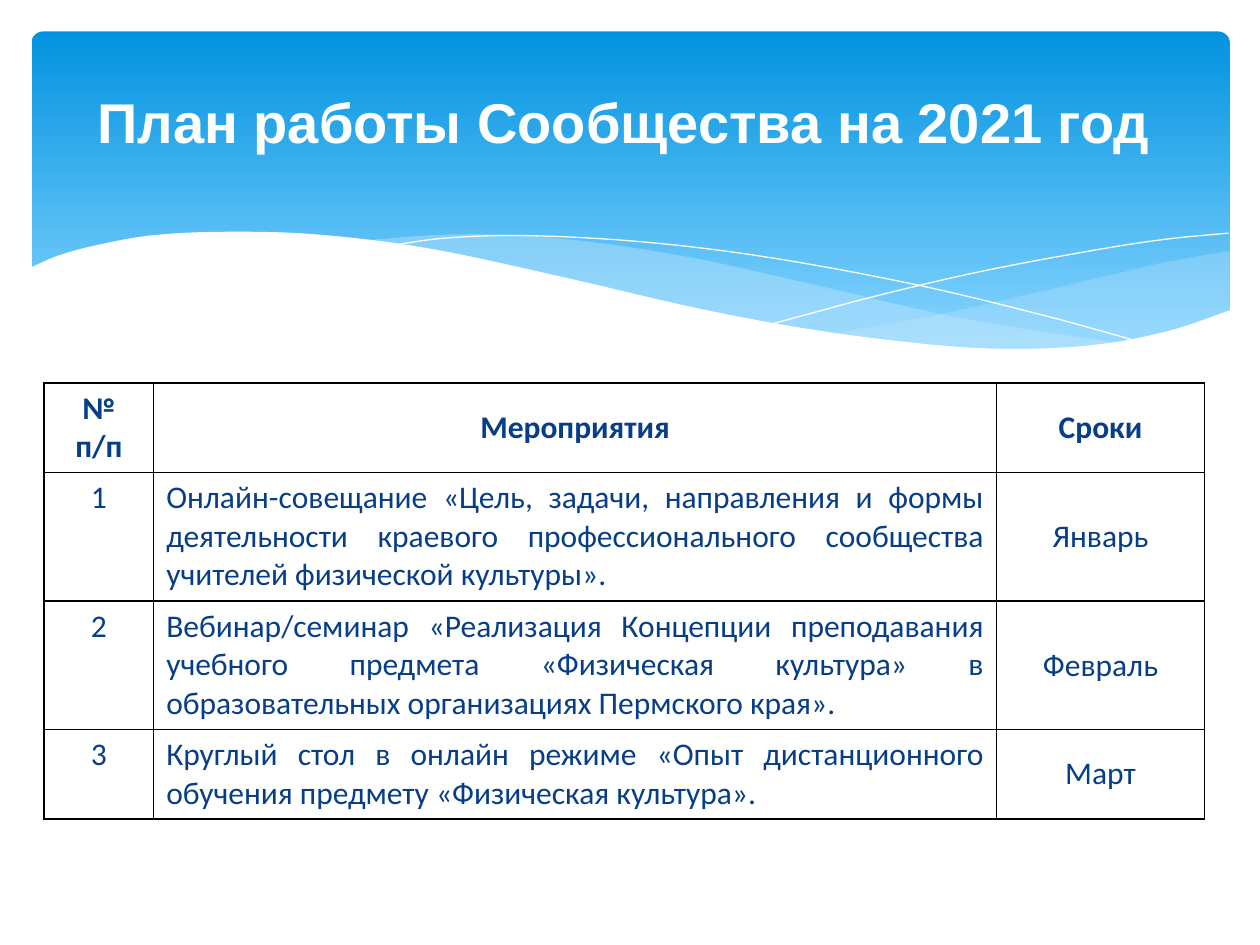
from pptx import Presentation
from pptx.dml.color import RGBColor
from pptx.enum.shapes import MSO_SHAPE
from pptx.enum.text import MSO_ANCHOR, PP_ALIGN
from pptx.oxml import parse_xml
from pptx.oxml.ns import nsdecls, qn
from pptx.util import Inches, Pt
from lxml import etree

CENTER, JUSTIFY = PP_ALIGN.CENTER, PP_ALIGN.JUSTIFY
TOP, MIDDLE = MSO_ANCHOR.TOP, MSO_ANCHOR.MIDDLE
WHITE = RGBColor(0xFF, 0xFF, 0xFF)
NAVY = RGBColor(0x07, 0x3E, 0x87)
DEEP = RGBColor(0x02, 0x93, 0xE0)
SKY = RGBColor(0x83, 0xD3, 0xFE)
PALE = RGBColor(0xC6, 0xE7, 0xFC)

# Content
TITLE = "План работы Сообщества на 2021 год"
HEAD = ("№ п/п", "Мероприятия", "Сроки")
PLAN = [
    ("Онлайн-совещание «Цель, задачи, направления и формы деятельности "
     "краевого профессионального сообщества учителей физической культуры».",
     "Январь"),
    ("Вебинар/семинар «Реализация Концепции преподавания учебного предмета "
     "«Физическая культура» в образовательных организациях Пермского края».",
     "Февраль"),
    ("Круглый стол в онлайн режиме «Опыт дистанционного обучения предмету "
     "«Физическая культура».",
     "Март"),
]
COLS = (0.87, 6.69, 1.65)
ROWS = (0.71, 1.02, 1.02, 0.71)

# Wave edges, left to right, in inches
RIGHT_TOP = [(6.61, 2.65), (7.53, 2.48), (8.61, 2.23), (9.21, 2.09), (9.76, 1.99)]
RIGHT_LOW = [(6.61, 2.65), (7.32, 2.74), (8.03, 2.78), (8.72, 2.74), (9.28, 2.63),
             (9.76, 2.47)]
MID_TOP = [(2.86, 1.91), (3.61, 1.86), (4.42, 1.89), (5.41, 2.03), (6.29, 2.22),
           (7.41, 2.48), (8.07, 2.6), (8.93, 2.73)]
MID_LOW = [(2.86, 1.91), (3.62, 2.03), (4.49, 2.22), (5.66, 2.48), (6.65, 2.66),
           (7.61, 2.77), (8.28, 2.78), (8.93, 2.73)]
FALL = [(3.09, 1.95), (3.53, 1.89), (4.16, 1.87), (5.1, 1.92), (6.08, 2.04),
        (7.27, 2.26), (8.31, 2.51), (9.07, 2.72)]
RISE = [(6.13, 2.57), (6.95, 2.35), (7.76, 2.16), (8.66, 1.99), (9.24, 1.9),
        (9.75, 1.85)]
FRONT = [(0.23, 2.13), (0.46, 2.03), (0.75, 1.95), (1.19, 1.87), (1.77, 1.84),
         (2.5, 1.86), (3.39, 1.97), (4.47, 2.2), (5.55, 2.45), (6.47, 2.62),
         (7.44, 2.74), (8.09, 2.77), (8.75, 2.73), (9.3, 2.62), (9.77, 2.46)]
BASE = [(0.23, 3.29), (9.77, 3.29)]


def curve(knots, steps=8):
    """Smooth points through the knots, by cubic Hermite pieces."""
    last = len(knots) - 1
    slopes = []
    for i in range(last + 1):
        (x0, y0), (x1, y1) = knots[max(i - 1, 0)], knots[min(i + 1, last)]
        slopes.append((y1 - y0) / (x1 - x0))
    out = [knots[0]]
    for i in range(last):
        (x0, y0), (x1, y1) = knots[i], knots[i + 1]
        w = x1 - x0
        for k in range(1, steps + 1):
            t = k / steps
            s = 1 - t
            y = (y0 * (1 + 2 * t) * s * s + w * slopes[i] * t * s * s
                 + y1 * t * t * (3 - 2 * t) - w * slopes[i + 1] * t * t * s)
            out.append((x0 + w * t, y))
    return out


def draw(shapes, points, closed):
    pts = [(Inches(x), Inches(y)) for x, y in points]
    pen = shapes.build_freeform(*pts[0])
    pen.add_line_segments(pts[1:], close=closed)
    shape = pen.convert_to_shape()
    shape.shadow.inherit = False
    return shape


def band(shapes, top, low, color, alpha=100):
    shape = draw(shapes, curve(top) + low[::-1], True)
    shape.fill.solid()
    shape.fill.fore_color.rgb = color
    shape.line.fill.background()
    if alpha < 100:
        tint = shape.fill._xPr.find(qn("a:solidFill"))[0]
        etree.SubElement(tint, qn("a:alpha")).set("val", str(alpha * 1000))


def thread(shapes, knots):
    shape = draw(shapes, curve(knots), False)
    shape.fill.background()
    shape.line.color.rgb = WHITE
    shape.line.width = Pt(0)


def write(frame, text, size=18, font="Calibri", color=NAVY, bold=False,
          align=CENTER, anchor=MIDDLE):
    frame.word_wrap = True
    frame.vertical_anchor = anchor
    para = frame.paragraphs[0]
    para.alignment = align
    run = para.add_run()
    run.text = text
    run.font.size, run.font.name, run.font.bold = Pt(size), font, bold
    run.font.color.rgb = color


def outline(cell):
    cell.fill.background()
    props = cell._tc.get_or_add_tcPr()
    for i, side in enumerate("LRTB"):
        props.insert(i, parse_xml(
            f'<a:ln{side} {nsdecls("a")} w="12700"><a:solidFill>'
            f'<a:srgbClr val="000000"/></a:solidFill></a:ln{side}>'))


def main():
    prs = Presentation()
    prs.slide_width, prs.slide_height = Inches(10), Inches(7.5)
    shapes = prs.slides.add_slide(prs.slide_layouts[6]).shapes

    # Blue banner
    banner = shapes.add_shape(MSO_SHAPE.ROUNDED_RECTANGLE, Inches(0.25),
                              Inches(0.25), Inches(9.51), Inches(2.7))
    banner.adjustments[0] = 0.034
    banner.shadow.inherit = False
    banner.line.fill.background()
    banner.fill.gradient()
    banner.fill.gradient_angle = 270
    for stop, color, pos in zip(banner.fill.gradient_stops, (DEEP, SKY), (0, 0.9)):
        stop.color.rgb = color
        stop.position = pos

    # Waves
    band(shapes, RIGHT_TOP, curve(RIGHT_LOW), PALE, 29)
    band(shapes, MID_TOP, curve(MID_LOW), PALE, 40)
    thread(shapes, FALL)
    thread(shapes, RISE)
    band(shapes, FRONT, BASE, WHITE)

    # Title
    title = shapes.add_textbox(Inches(0.27), Inches(0.28), Inches(9.37), Inches(1.37))
    write(title.text_frame, TITLE, size=32, font="Arial", color=WHITE, bold=True)

    # Plan table
    table = shapes.add_table(len(ROWS), len(COLS), Inches(0.35), Inches(3.04),
                             Inches(sum(COLS)), Inches(sum(ROWS))).table
    table.first_row = table.horz_banding = False
    for col, width in zip(table.columns, COLS):
        col.width = Inches(width)
    for row, height in zip(table.rows, ROWS):
        row.height = Inches(height)
    lines = [HEAD] + [(str(n), *item) for n, item in enumerate(PLAN, 1)]
    for r, line in enumerate(lines):
        for c, text in enumerate(line):
            cell = table.cell(r, c)
            body = r > 0
            write(cell.text_frame, text, bold=not body,
                  align=JUSTIFY if body and c == 1 else CENTER)
            cell.vertical_anchor = TOP if body and c < 2 else MIDDLE
            outline(cell)

    prs.save("out.pptx")


if __name__ == "__main__":
    main()
